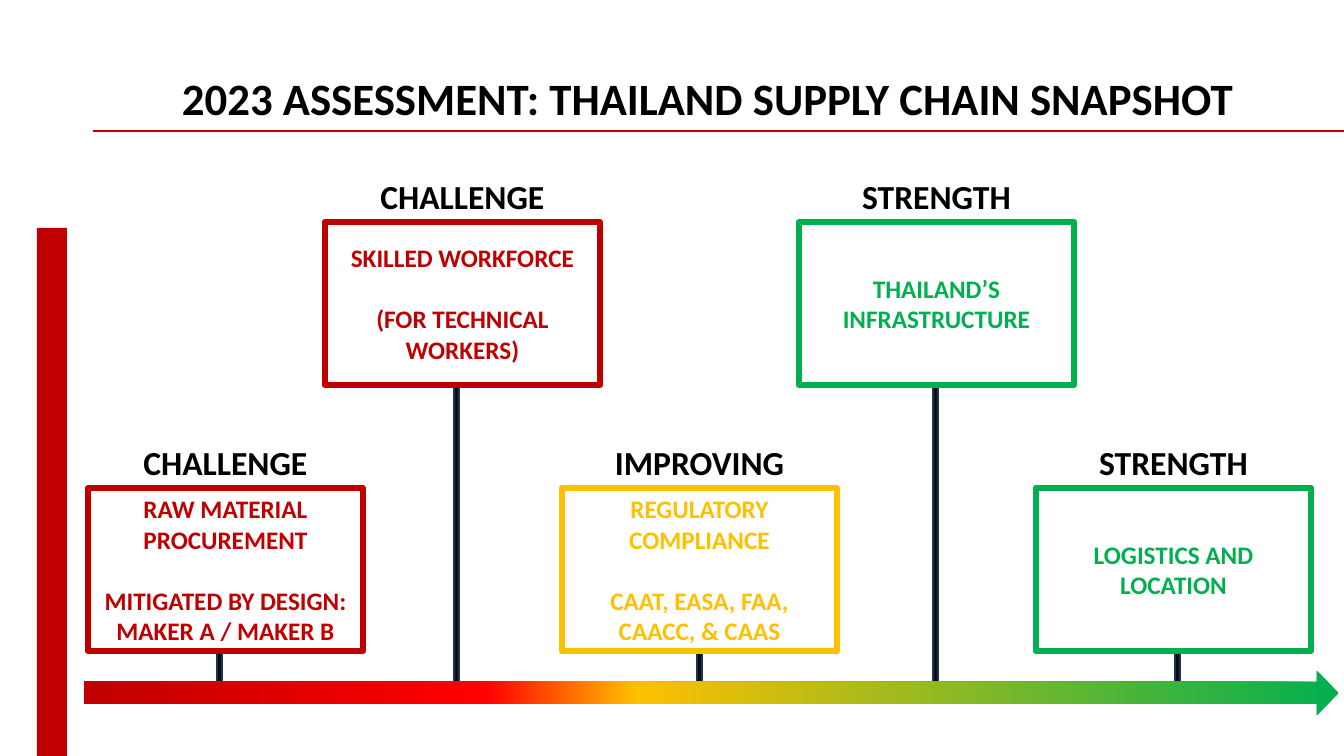
"""Build the 2023 Thailand supply chain assessment slide."""
from lxml import etree
from pptx import Presentation
from pptx.dml.color import RGBColor
from pptx.enum.shapes import MSO_CONNECTOR, MSO_SHAPE
from pptx.enum.text import MSO_ANCHOR, PP_ALIGN
from pptx.oxml.ns import qn
from pptx.util import Pt

RECT, ARROW = MSO_SHAPE.RECTANGLE, MSO_SHAPE.RIGHT_ARROW
STRAIGHT = MSO_CONNECTOR.STRAIGHT
CENTER, RIGHT = PP_ALIGN.CENTER, PP_ALIGN.RIGHT
MIDDLE, BOTTOM = MSO_ANCHOR.MIDDLE, MSO_ANCHOR.BOTTOM

BLACK = RGBColor(0x00, 0x00, 0x00)
WHITE = RGBColor(0xFF, 0xFF, 0xFF)
RED = RGBColor(0xC0, 0x00, 0x00)
BRIGHT_RED = RGBColor(0xFF, 0x00, 0x00)
AMBER = RGBColor(0xFF, 0xC0, 0x00)
GREEN = RGBColor(0x00, 0xB0, 0x50)
STEM_FILL = RGBColor(0x0D, 0x0D, 0x0D)
STEM_LINE = RGBColor(0x1E, 0x32, 0x56)

TITLE = "2023 ASSESSMENT: THAILAND SUPPLY CHAIN SNAPSHOT"
LOW, HIGH = 488, 222
# rating, box text, colour, box top, stem left
CARDS = [
    ("CHALLENGE", ["RAW MATERIAL PROCUREMENT", "MITIGATED BY DESIGN: MAKER A / MAKER B"], RED, LOW, 217),
    ("CHALLENGE", ["SKILLED WORKFORCE", "(FOR TECHNICAL WORKERS)"], RED, HIGH, 454),
    ("IMPROVING", ["REGULATORY COMPLIANCE", "CAAT, EASA, FAA, CAACC, & CAAS"], AMBER, LOW, 697),
    ("STRENGTH", ["THAILAND’S INFRASTRUCTURE"], GREEN, HIGH, 933),
    ("STRENGTH", ["LOGISTICS AND LOCATION"], GREEN, LOW, 1175),
]
SCALE_STOPS = [(0, GREEN), (56, AMBER), (68, BRIGHT_RED), (100, RED)]

CARD_LEFT, CARD_STEP, CARD_W, CARD_H = 88, 237, 275, 163
LABEL_RISE, LABEL_H = 50, 48
STEM_W, STEM_END = 5, 683
FONT = "Calibri"


def px(*lengths):
    """Turn px into EMU."""
    return [round(n * 914400 / 100.8) for n in lengths]


def put_text(s, paragraphs, size, color, align=CENTER, anchor=MIDDLE, gap=0, spacing=None):
    """Write bold paragraphs into a shape."""
    tf = s.text_frame
    tf.word_wrap = True
    tf.vertical_anchor = anchor
    for i, text in enumerate(paragraphs):
        p = tf.add_paragraph() if i else tf.paragraphs[0]
        p.alignment = align
        if spacing:
            p.line_spacing = spacing
        if i:
            p.space_before = Pt(gap)
        r = p.add_run()
        r.text = text
        r.font.name, r.font.size, r.font.bold = FONT, Pt(size), True
        r.font.color.rgb = color


def add_block(sp, kind, box, fill=None, line=None, width=1):
    """Add a flat preset shape."""
    s = sp.add_shape(kind, *px(*box))
    s.shadow.inherit = False
    if fill is not None:
        s.fill.solid()
        s.fill.fore_color.rgb = fill
    if line is None:
        s.line.fill.background()
    else:
        s.line.color.rgb = line
        s.line.width = Pt(width)
    return s


def set_gradient(s, stops, angle):
    """Fill a shape with a linear gradient."""
    s.fill.gradient()
    s.fill.gradient_angle = angle
    gs_list = s.element.spPr.find(qn("a:gradFill")).find(qn("a:gsLst"))
    for gs in list(gs_list):
        gs_list.remove(gs)
    for position, color in stops:
        gs = etree.SubElement(gs_list, qn("a:gs"), pos=str(position * 1000))
        etree.SubElement(gs, qn("a:srgbClr"), val=str(color))


def main():
    prs = Presentation()
    prs.slide_width, prs.slide_height = px(1344, 756)
    sp = prs.slides.add_slide(prs.slide_layouts[6]).shapes

    rule = sp.add_connector(STRAIGHT, *px(93, 131, 1344, 131))
    rule.line.color.rgb = RED
    rule.line.width = Pt(1.5)
    etree.SubElement(rule.element.spPr, qn("a:effectLst"))
    add_block(sp, RECT, (37, 228, 30, 528), RED)

    title = sp.add_textbox(*px(85, 39, 1159, 91))
    put_text(title, [TITLE], 32, BLACK, align=RIGHT, anchor=BOTTOM, spacing=0.9)

    for _, _, _, top, stem in CARDS:
        start = top + CARD_H
        add_block(sp, RECT, (stem, start, STEM_W, STEM_END - start), STEM_FILL, STEM_LINE)

    scale = add_block(sp, ARROW, (84, 671, 1255, 44))
    set_gradient(scale, SCALE_STOPS, 180)

    for i, (rating, lines, color, top, _) in enumerate(CARDS):
        left = CARD_LEFT + i * CARD_STEP
        card = add_block(sp, RECT, (left, top, CARD_W, CARD_H), WHITE, color, 4.5)
        put_text(card, lines, 18, color, gap=22)
        label = sp.add_textbox(*px(left, top - LABEL_RISE, CARD_W, LABEL_H))
        put_text(label, [rating], 24, BLACK)

    prs.save("out.pptx")


if __name__ == "__main__":
    main()
